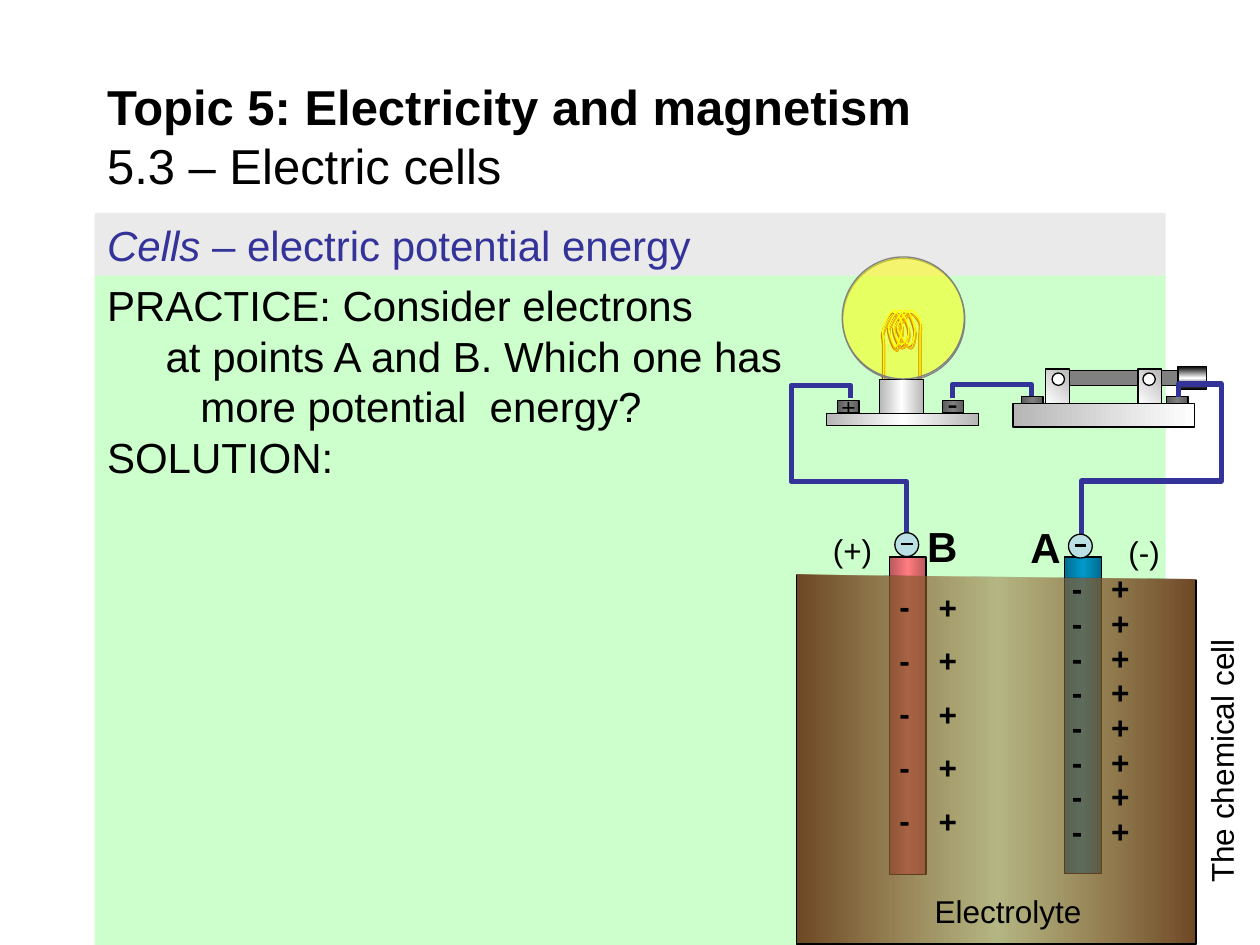
from lxml import etree
from pptx import Presentation
from pptx.dml.color import RGBColor
from pptx.enum.shapes import MSO_CONNECTOR, MSO_SHAPE
from pptx.enum.text import MSO_ANCHOR, MSO_AUTO_SIZE, PP_ALIGN
from pptx.oxml import parse_xml
from pptx.oxml.ns import nsdecls, qn
from pptx.util import Cm, Pt

RECT = MSO_SHAPE.RECTANGLE
OVAL = MSO_SHAPE.OVAL
STRAIGHT = MSO_CONNECTOR.STRAIGHT
TOP, MIDDLE = MSO_ANCHOR.TOP, MSO_ANCHOR.MIDDLE
LEFT = PP_ALIGN.LEFT
FIT_SHAPE = MSO_AUTO_SIZE.SHAPE_TO_FIT_TEXT

COLORS = {
    "black": "000000", "white": "FFFFFF", "gray": "808080", "header": "EAEAEA",
    "panel": "CCFFCC", "blue": "333399", "yellow": "FFFF00", "orange": "FF6600",
    "dark red": "990000", "electron": "BBE0E3", "red": "FF7C80", "teal": "0099CC",
    "brown": "996633",
}
SHADE = '<a:shade val="46275"/>'
METAL = (0, ["white shade", "white", "white shade"])
TERMINAL = (0, ["gray shade", "gray", "gray shade"])
POST = (315, ["white", "white shade"])
COIL_UNIT = 0.0254


def paint(shape, fill=None, line="black", width=0.75, alpha=100):
    shape.shadow.inherit = False
    if fill is None:
        shape.fill.background()
    elif isinstance(fill, tuple):
        angle, names = fill
        shape.fill.gradient()
        gradient = shape._element.spPr.find(qn("a:gradFill"))
        stops = ""
        for index, name in enumerate(names):
            effect = SHADE if name.endswith(" shade") else ""
            if index == 1 and alpha < 100:
                effect += f'<a:alpha val="{alpha * 1000}"/>'
            stops += (f'<a:gs pos="{index * 100000 // (len(names) - 1)}">'
                      f'<a:srgbClr val="{COLORS[name.removesuffix(" shade")]}">{effect}'
                      f'</a:srgbClr></a:gs>')
        gradient.getparent().replace(gradient, parse_xml(
            f'<a:gradFill {nsdecls("a")} rotWithShape="1"><a:gsLst>{stops}</a:gsLst>'
            f'<a:lin ang="{angle * 60000}" scaled="1"/></a:gradFill>'))
    else:
        shape.fill.solid()
        shape.fill.fore_color.rgb = RGBColor.from_string(COLORS[fill])
        if alpha < 100:
            color = shape._element.spPr.find(qn("a:solidFill"))[0]
            color.append(parse_xml(f'<a:alpha {nsdecls("a")} val="{alpha * 1000}"/>'))
    if line is None:
        shape.line.fill.background()
    else:
        shape.line.color.rgb = RGBColor.from_string(COLORS[line])
        shape.line.width = Pt(width)


def write(shape, text, size, color="black", bold=False, anchor=TOP, wrap=True):
    text_frame = shape.text_frame
    text_frame.text = text
    text_frame.word_wrap = wrap
    text_frame.vertical_anchor = anchor
    for paragraph in text_frame.paragraphs:
        paragraph.alignment = LEFT
        for run in paragraph.runs:
            run.font.name = "Arial"
            run.font.size = Pt(size)
            run.font.bold = bold
            run.font.color.rgb = RGBColor.from_string(COLORS[color])
    return text_frame


presentation = Presentation()
presentation.slide_width = Cm(25.4)
presentation.slide_height = Cm(19.05)
slide = presentation.slides.add_slide(presentation.slide_layouts[6])
shapes = slide.shapes

panel = shapes.add_shape(RECT, Cm(1.91), Cm(5.52), Cm(21.59), Cm(13.53))
paint(panel, "panel", None)
question = write(panel, "PRACTICE: Consider electrons\nat points A and B. Which one has\n"
                 "more potential  energy?\nSOLUTION:", 24)
for paragraph, indent in zip(question.paragraphs, [0, 1.18, 1.88, 0]):
    paragraph._p.get_or_add_pPr().set("marL", str(Cm(indent)))

header = shapes.add_shape(RECT, Cm(1.91), Cm(4.29), Cm(21.59), Cm(1.27))
paint(header, "header", None)
heading = write(header, "Cells", 24, "blue", anchor=MIDDLE).paragraphs[0]
heading.runs[0].font.italic = True
run = heading.add_run()
run.text = " – electric potential energy"
run.font.name = "Arial"
run.font.size = Pt(24)
run.font.color.rgb = RGBColor.from_string(COLORS["blue"])

coil = [(2, 77), (2, 58), (2, 39), (2, 28), (2, 18), (0, 20), (2, 15), (3, 11),
        (7, 2), (10, 1), (12, 1), (17, 9), (17, 14), (17, 18), (13, 30), (12, 30),
        (10, 30), (6, 19), (6, 14), (7, 10), (12, 1), (14, 1), (17, 2), (22, 11),
        (22, 16), (23, 21), (18, 29), (16, 28), (14, 28), (10, 19), (10, 14), (11, 10),
        (17, 0), (20, 1), (23, 1), (26, 11), (27, 16), (27, 21), (25, 29), (23, 28),
        (20, 28), (13, 19), (13, 14), (14, 10), (20, 2), (23, 1), (26, 0), (29, 6),
        (31, 9), (32, 12), (31, 10), (31, 21), (31, 33), (31, 56), (31, 79)]
for color, left, top in [("black", 17.78, 6.32), ("dark red", 17.74, 6.29),
                         ("orange", 17.78, 6.32), ("yellow", 17.76, 6.23)]:
    points = [(Cm(left + x * COIL_UNIT), Cm(top + y * COIL_UNIT)) for x, y in coil]
    builder = shapes.build_freeform(*points[0])
    builder.add_line_segments(points[1:], close=False)
    filament = builder.convert_to_shape()
    segments = list(filament._element.iter(qn("a:lnTo")))
    outline = segments[0].getparent()
    for start in range(0, len(segments), 3):
        bezier = etree.SubElement(outline, qn("a:cubicBezTo"))
        for segment in segments[start:start + 3]:
            bezier.append(segment[0])
            outline.remove(segment)
    paint(filament, None, color)

knife = [(RECT, 21.16, 7.47, 3.15, 0.3, "gray"),
         (RECT, 23.75, 7.39, 0.58, 0.46, (90, ["black", "white", "black"]))]
glass = [(OVAL, 16.99, 5.21, 2.46, 2.46, None)]
electrodes = [(RECT, 17.93, 11.23, 0.74, 6.4, (0, ["red shade", "red", "red shade"])),
              (RECT, 21.46, 11.23, 0.74, 6.38, (0, ["teal shade", "teal", "teal shade"]))]
lamp_base = [(RECT, 16.66, 8.33, 3.07, 0.25, METAL),
             (RECT, 17.73, 7.65, 0.89, 0.69, METAL),
             (RECT, 16.89, 8.08, 0.43, 0.25, TERMINAL),
             (RECT, 19, 8.08, 0.43, 0.25, TERMINAL)]
switch = [(RECT, 20.42, 8.13, 3.66, 0.48, (0, ["white shade", "white"])),
          (RECT, 21.08, 7.44, 0.48, 0.69, POST),
          (RECT, 20.6, 8, 0.43, 0.13, TERMINAL),
          (RECT, 23.52, 8, 0.43, 0.13, TERMINAL),
          (RECT, 22.94, 7.44, 0.48, 0.69, POST),
          (OVAL, 21.21, 7.52, 0.25, 0.25, "white"),
          (OVAL, 23.04, 7.52, 0.25, 0.25, "white")]
for parts, line in [(knife, "black"), (glass, "gray"), (electrodes, "black")]:
    for kind, left, top, width, height, fill in parts:
        paint(shapes.add_shape(kind, Cm(left), Cm(top), Cm(width), Cm(height)), fill, line)

points = [(Cm(x), Cm(y)) for x, y in [(16.06, 11.59), (16.06, 19.03), (24.11, 19.03), (24.11, 11.69)]]
builder = shapes.build_freeform(*points[0])
builder.add_line_segments(points[1:], close=False)
paint(builder.convert_to_shape(), (0, ["brown shade", "brown", "brown shade"]), alpha=47)

for sign, count, left, top, height, line_spacing in [
        ("-", 5, 17.88, 11.71, 5.61, 1), ("-", 8, 21.36, 11.68, 6.02, 0.5),
        ("+", 8, 22.15, 11.68, 6.02, 0.5), ("+", 5, 18.67, 11.72, 5.61, 1)]:
    charges = shapes.add_textbox(Cm(left), Cm(top), Cm(0.79), Cm(height))
    for paragraph in write(charges, "\n".join(sign * count), 18, bold=True).paragraphs:
        paragraph.line_spacing = line_spacing
        paragraph.space_before = Pt(9)

for parts in [lamp_base, switch]:
    group = shapes.add_group_shape()
    for kind, left, top, width, height, fill in parts:
        paint(group.shapes.add_shape(kind, Cm(left), Cm(top), Cm(width), Cm(height)), fill)

wires = [[(18.27, 11.2), (18.27, 9.71), (15.95, 9.71), (15.95, 7.77), (17.15, 7.77), (17.15, 8.03)],
         [(19.2, 8.03), (19.2, 7.75), (20.79, 7.75), (20.79, 7.98)],
         [(23.76, 8), (23.76, 7.74), (24.62, 7.74), (24.62, 9.7), (21.8, 9.7), (21.8, 11.2)]]
for wire in wires:
    points = [(Cm(x), Cm(y)) for x, y in wire]
    builder = shapes.build_freeform(*points[0])
    builder.add_line_segments(points[1:], close=False)
    paint(builder.convert_to_shape(), None, "blue", 3)

bulb = shapes.add_shape(OVAL, Cm(16.98), Cm(5.18), Cm(2.46), Cm(2.46))
paint(bulb, "yellow", "gray", alpha=52)

for left, top in [(21.54, 10.77), (18.04, 10.74)]:
    group = shapes.add_group_shape()
    paint(group.shapes.add_shape(OVAL, Cm(left), Cm(top), Cm(0.48), Cm(0.48)), "electron")
    minus = group.shapes.add_connector(STRAIGHT, Cm(left + 0.13), Cm(top + 0.23),
                                       Cm(left + 0.36), Cm(top + 0.23))
    minus.line.color.rgb = RGBColor.from_string(COLORS["black"])
    minus.line.width = Pt(1.5)
    minus._element.spPr.append(parse_xml(f'<a:effectLst {nsdecls("a")}/>'))

for text, left, top, width, height, size, bold, rotation in [
        ("-", 18.85, 7.62, 0.71, 1.02, 18, False, 0),
        ("+", 16.71, 7.77, 0.79, 0.84, 14, False, 0),
        ("A", 20.52, 10.39, 0.94, 1.09, 24, True, 0),
        ("B", 18.44, 10.36, 0.94, 1.09, 24, True, 0),
        ("(+)", 16.54, 10.59, 1.32, 1.02, 18, False, 0),
        ("(-)", 22.5, 10.62, 1.14, 1.02, 18, False, 0),
        ("Electrolyte", 18.59, 17.86, 3.48, 1.02, 18, False, 0),
        ("The chemical cell", 21.92, 14.83, 5.41, 1.02, 18, False, 270)]:
    label = shapes.add_textbox(Cm(left), Cm(top), Cm(width), Cm(height))
    label.rotation = rotation
    write(label, text, size, bold=bold, wrap=False).auto_size = FIT_SHAPE

title = shapes.add_textbox(Cm(1.91), Cm(1.48), Cm(21.59), Cm(2.49))
title_frame = write(title, "Topic 5: Electricity and magnetism\v5.3 – Electric cells", 28,
                    bold=True, anchor=MIDDLE)
title_frame.paragraphs[0].runs[1].font.bold = False

presentation.save("out.pptx")
